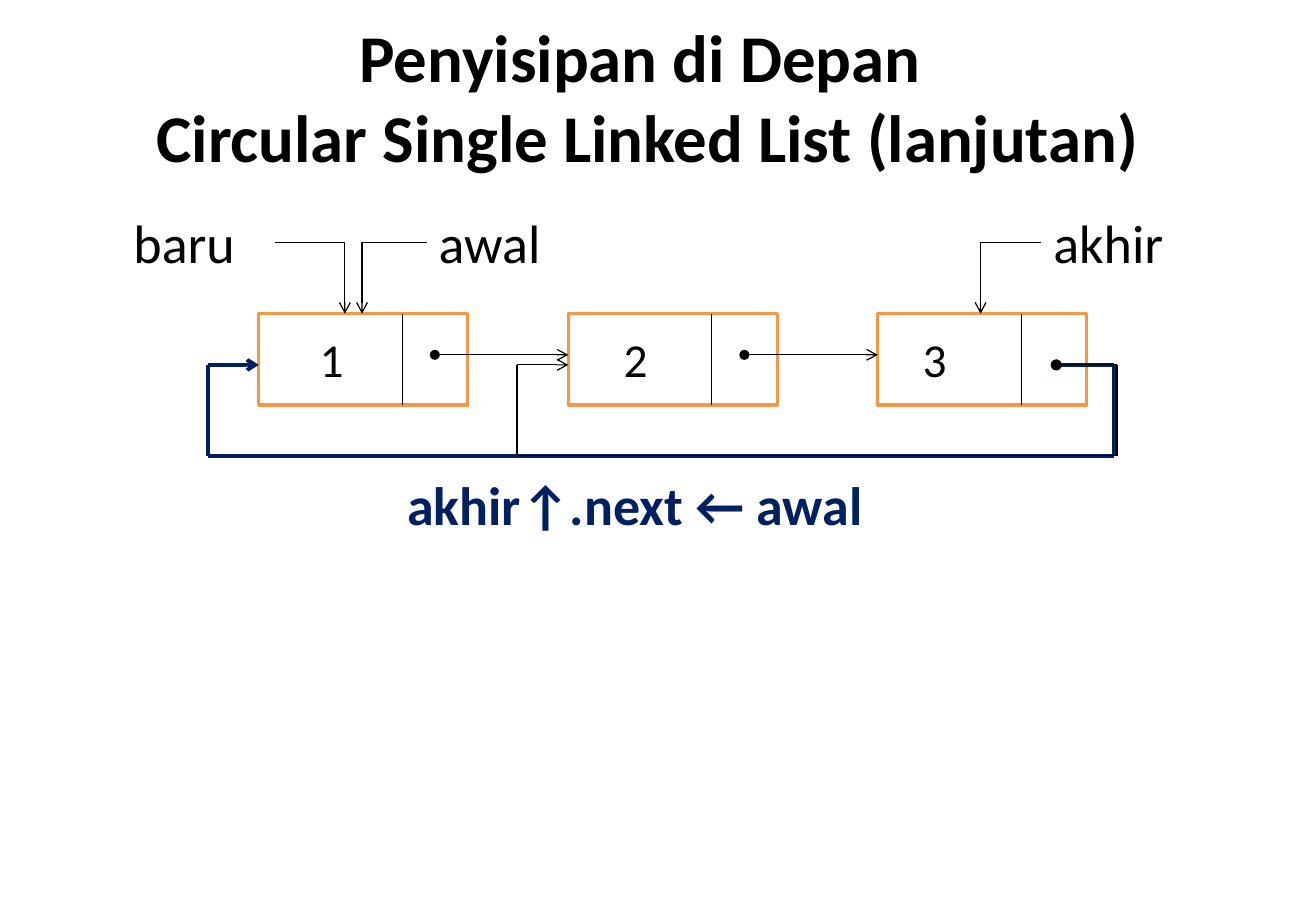
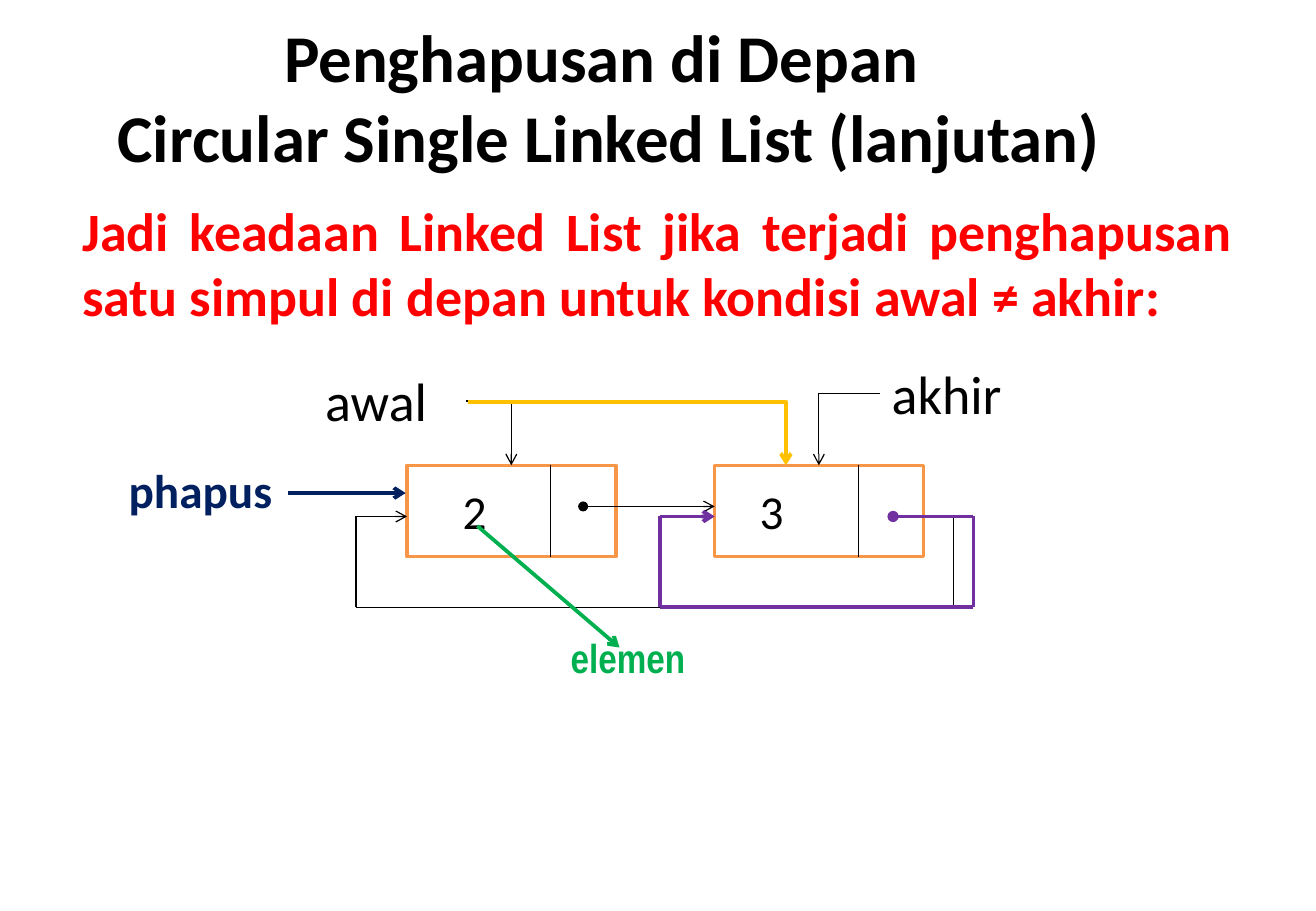
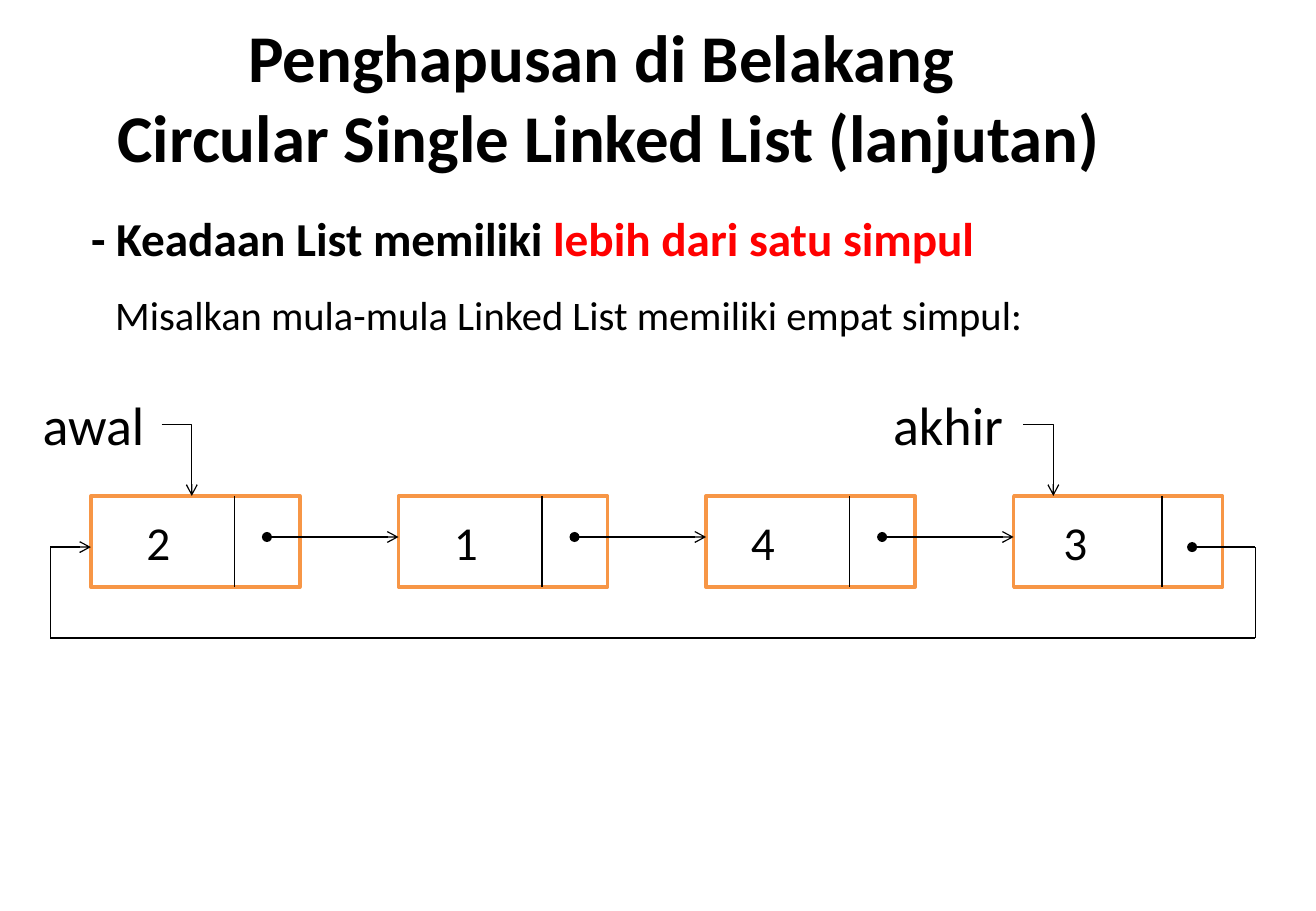
from dataclasses import dataclass

from lxml import etree
from pptx import Presentation
from pptx.dml.color import RGBColor
from pptx.enum.shapes import MSO_CONNECTOR, MSO_SHAPE
from pptx.enum.text import MSO_ANCHOR, MSO_AUTO_SIZE, PP_ALIGN
from pptx.oxml.ns import qn
from pptx.util import Cm, Pt

STRAIGHT, ELBOW = MSO_CONNECTOR.STRAIGHT, MSO_CONNECTOR.ELBOW
RECTANGLE = MSO_SHAPE.RECTANGLE
LEFT, CENTER, JUSTIFY = PP_ALIGN.LEFT, PP_ALIGN.CENTER, PP_ALIGN.JUSTIFY
TOP, MIDDLE = MSO_ANCHOR.TOP, MSO_ANCHOR.MIDDLE
NO_AUTOFIT = MSO_AUTO_SIZE.NONE
TITLE_ONLY, TITLE_AND_BODY = 5, 1


@dataclass(frozen=True)
class Theme:
    font: str = "Calibri"
    narrow_font: str = "Arial Narrow"
    black: str = "000000"
    white: str = "FFFFFF"
    orange: str = "F79646"
    navy: str = "002060"
    red: str = "FF0000"
    green: str = "00B050"
    gold: str = "FFC000"
    purple: str = "7030A0"
    title_size: float = 39.6
    label_size: float = 32
    value_size: float = 28
    small_size: float = 24
    thin: float = 0.75
    node_line: float = 2
    thick: float = 2.25


THEME = Theme()


@dataclass(frozen=True)
class Node:
    value: str
    inset: float = 0.91
    divider: float = 3.0


def style_master(deck):
    """Set the size and weight that all titles inherit."""
    style = deck.slide_master.element.find(
        ".//" + qn("p:titleStyle") + "/" + qn("a:lvl1pPr") + "/" + qn("a:defRPr"))
    style.set("sz", str(int(THEME.title_size * 100)))
    style.set("b", "1")


def place(box, left, top, width, height):
    box.left, box.top, box.width, box.height = (
        Cm(left), Cm(top), Cm(width), Cm(height))


def write_text(box, *spans, size=THEME.label_size, font=THEME.font, bold=False,
               align=LEFT, anchor=TOP):
    """Write one paragraph; each span is a (text, colour) pair."""
    frame = box.text_frame
    frame.word_wrap = True
    frame.auto_size = NO_AUTOFIT
    frame.vertical_anchor = anchor
    para = frame.paragraphs[0]
    para.alignment = align
    para.space_before = Pt(0)
    properties = para._p.get_or_add_pPr()
    properties.set("marL", "0")
    properties.set("indent", "0")
    etree.SubElement(properties, qn("a:buNone"))
    for text, colour in spans:
        for number, line in enumerate(text.split("\n")):
            if number:
                para.add_line_break()
            span = para.add_run()
            span.text = line
            span.font.name = font
            span.font.size = Pt(size)
            span.font.bold = bold
            span.font.color.rgb = RGBColor.from_string(colour)


def add_text(page, text, left, top, width, height, colour=THEME.black, **style):
    box = page.shapes.add_textbox(Cm(left), Cm(top), Cm(width), Cm(height))
    write_text(box, (text, colour), **style)


def add_line(page, start, end, colour=THEME.black, width=THEME.thin,
             head=None, tail=None, bent=False):
    """Draw a line; a bent one runs across first, then down."""
    line = page.shapes.add_connector(
        ELBOW if bent else STRAIGHT, *(Cm(value) for value in (*start, *end)))
    line.line.color.rgb = RGBColor.from_string(colour)
    line.line.width = Pt(width)
    properties = line._element.spPr
    if bent:
        properties.find(qn("a:prstGeom")).set("prst", "bentConnector2")
    outline = properties.find(qn("a:ln"))
    for tag, kind in (("a:headEnd", head), ("a:tailEnd", tail)):
        if kind:
            etree.SubElement(outline, qn(tag)).set("type", kind)
    etree.SubElement(properties, qn("a:effectLst"))


class LinkedList:
    """A row of nodes; horizontal offsets count from its left edge."""

    node_width, node_height = 4.37, 1.91
    link_x, link_y = 3.68, 0.86
    loop_x, loop_y, loop_floor = 3.73, 1.07, 2.97

    def __init__(self, page, left, top, nodes, pitch=6.43):
        self.page, self.left, self.top = page, left, top
        self.node_lefts = [left + pitch * index for index in range(len(nodes))]
        for node_left, node in zip(self.node_lefts, nodes):
            self.add_node(node_left, node)
        link_y = top + self.link_y
        for node_left, next_left in zip(self.node_lefts, self.node_lefts[1:]):
            add_line(page, (node_left + self.link_x, link_y), (next_left, link_y),
                     head="oval", tail="arrow")

    def add_node(self, left, node):
        box = self.page.shapes.add_shape(
            RECTANGLE, Cm(left), Cm(self.top), Cm(self.node_width), Cm(self.node_height))
        box.shadow.inherit = False
        box.fill.solid()
        box.fill.fore_color.rgb = RGBColor.from_string(THEME.white)
        box.line.color.rgb = RGBColor.from_string(THEME.orange)
        box.line.width = Pt(THEME.node_line)
        divider = left + node.divider
        add_line(self.page, (divider, self.top), (divider, self.top + self.node_height))
        add_text(self.page, node.value, left + node.inset, self.top + 0.23, 1.6, 1.45,
                 size=THEME.value_size)

    def add_arrow_down(self, start_x, tip_x, rise, **style):
        add_line(self.page, (self.left + start_x, self.top - rise),
                 (self.left + tip_x, self.top), tail="arrow", bent=True, **style)

    def add_pointer(self, name, label_x, tip_x, width=3.2, rise=2.31):
        """Label above the row, with an arrow from its nearer side to the tip."""
        height = 1.63
        add_text(self.page, name, self.left + label_x, self.top - rise, width, height)
        start_x = label_x + width if tip_x > label_x else label_x
        self.add_arrow_down(start_x, tip_x, rise - height / 2)

    def add_loop(self, target=0, reach=5.0, back=1.07, **style):
        """Lead from the last node under the row to the target node."""
        level, floor = self.top + self.loop_y, self.top + self.loop_floor
        last, entry = self.node_lefts[-1], self.node_lefts[target]
        right, left = last + reach, entry - back
        corners = [(last + self.loop_x, level), (right, level), (right, floor),
                   (left, floor), (left, level), (entry, level)]
        final = len(corners) - 2
        for index, (start, end) in enumerate(zip(corners, corners[1:])):
            add_line(self.page, start, end, head="oval" if index == 0 else None,
                     tail="arrow" if index == final else None, **style)


def add_page(deck, heading, title_left=0.46, layout=TITLE_ONLY):
    page = deck.slides.add_slide(deck.slide_layouts[layout])
    title = page.shapes.title
    place(title, title_left, 0.64, 24.54, 2.74)
    write_text(title, (f"{heading} \nCircular Single Linked List (lanjutan)", THEME.black),
               size=THEME.title_size, bold=True, align=CENTER, anchor=MIDDLE)
    return page


def add_front_insertion(deck):
    page = add_page(deck, "Penyisipan di Depan", title_left=1.27)
    row = LinkedList(page, 5.41, 6.56,
                     [Node("1", inset=1.02), Node("2"), Node("3", inset=0.69)], pitch=6.47)
    row.add_pointer("baru", -2.87, 1.8)
    row.add_pointer("awal", 3.51, 2.16)
    row.add_pointer("akhir", 16.36, 15.09)
    row.add_loop(reach=4.93, colour=THEME.navy, width=THEME.thick)
    row.add_loop(target=1)
    add_text(page, "akhir↑.next ← awal", 8.26, 9.73, 11.23, 1.9,
             colour=THEME.navy, bold=True)


def add_front_deletion(deck):
    page = add_page(deck, "Penghapusan di Depan")
    add_text(page, "Jadi keadaan Linked List jika terjadi penghapusan satu simpul "
             "di depan untuk kondisi awal ≠ akhir:", 1.47, 4.01, 24.56, 1.9,
             colour=THEME.red, bold=True, align=JUSTIFY)
    row = LinkedList(page, 8.51, 9.73, [Node("2"), Node("3", inset=0.69)])
    row.add_pointer("akhir", 9.88, 8.61)
    row.add_pointer("awal", -1.96, 2.18, rise=2.16)
    row.add_loop()
    add_text(page, "phapus", 2.44, 9.53, 3.81, 1.45,
             colour=THEME.navy, size=THEME.value_size, bold=True)
    add_line(page, (6.02, 10.31), (8.48, 10.31), THEME.navy, THEME.thick, tail="arrow")
    add_text(page, "elemen", 11.68, 13.11, 4.01, 1.27, colour=THEME.green,
             size=THEME.small_size, font=THEME.narrow_font, bold=True)
    add_line(page, (9.98, 11), (12.95, 13.54), THEME.green, THEME.thick, tail="arrow")
    row.add_arrow_down(1.27, 7.92, 1.32, colour=THEME.gold, width=THEME.thick)
    row.add_loop(target=1, reach=5.41, back=1.14, colour=THEME.purple, width=THEME.thick)


def add_back_deletion(deck):
    page = add_page(deck, "Penghapusan di Belakang", layout=TITLE_AND_BODY)
    body = page.placeholders[1]
    place(body, 1.65, 4.24, 24.54, 1.7)
    write_text(body, ("- Keadaan List memiliki ", THEME.black),
               ("lebih dari satu simpul", THEME.red), size=THEME.value_size, bold=True)
    add_text(page, "Misalkan mula-mula Linked List memiliki empat simpul:",
             2.16, 5.94, 24.54, 1.7, size=THEME.small_size)
    row = LinkedList(page, 1.9, 10.37,
                     [Node("2"), Node("1"), Node("4", inset=0.69),
                      Node("3", inset=0.79, divider=3.1)])
    row.add_pointer("awal", -1.26, 2.11, width=2.74)
    row.add_pointer("akhir", 16.52, 20.12, width=2.97)
    row.add_loop(reach=5.05, back=0.85)


def main():
    deck = Presentation()
    deck.slide_width, deck.slide_height = Cm(27.51), Cm(19.05)
    style_master(deck)
    add_front_insertion(deck)
    add_front_deletion(deck)
    add_back_deletion(deck)
    deck.save("out.pptx")


if __name__ == "__main__":
    main()
